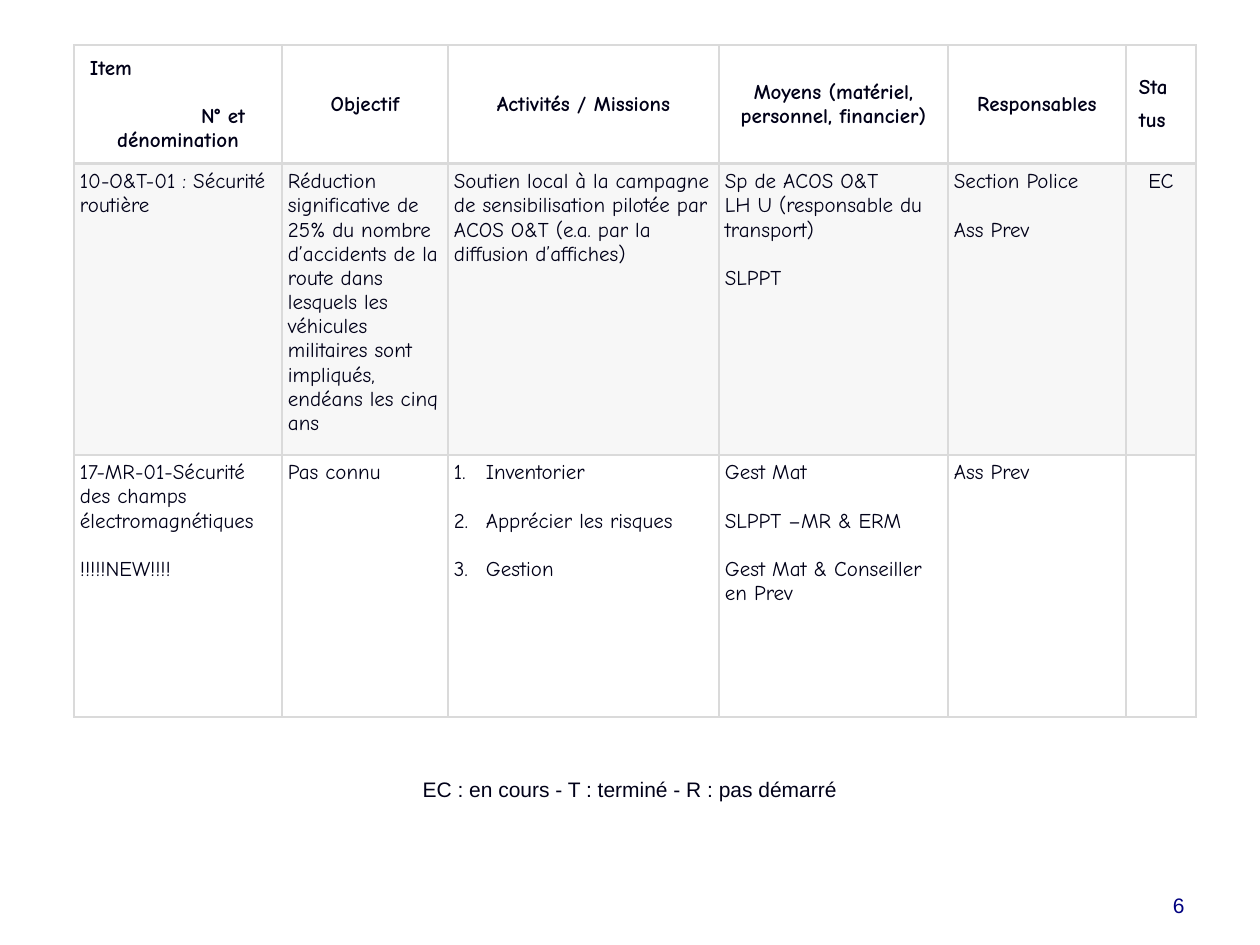
from dataclasses import dataclass

from lxml.etree import SubElement
from pptx import Presentation
from pptx.dml.color import RGBColor
from pptx.enum.text import MSO_ANCHOR, PP_ALIGN
from pptx.oxml.ns import qn
from pptx.util import Pt

SCALE = 914400 / 126
LEFT, CENTER, RIGHT = PP_ALIGN.LEFT, PP_ALIGN.CENTER, PP_ALIGN.RIGHT
TOP, MIDDLE, BOTTOM = MSO_ANCHOR.TOP, MSO_ANCHOR.MIDDLE, MSO_ANCHOR.BOTTOM
GAP = 13.8


def px(n):
    """Turn pixels into EMU."""
    return round(n * SCALE)


def rgb(value):
    """Turn a hex string into a colour."""
    return RGBColor.from_string(value)


@dataclass
class Para:
    """One paragraph with its layout."""
    text: str
    before: float = 0
    align: PP_ALIGN = LEFT
    indent: int = 0
    numbered: bool = False


class Deck:
    """Holds the style and the current slide."""
    ink, navy, line = "000018", "000080", "DADADA"
    sans, hand, size = "Arial", "Comic Neue", 12

    def __init__(self, width, height):
        """Start a presentation with one blank slide."""
        self.prs = Presentation()
        self.prs.slide_width, self.prs.slide_height = px(width), px(height)
        self.s = self.prs.slides.add_slide(self.prs.slide_layouts[6])

    def add_paras(self, tf, paras, font, color, bold=False):
        """Fill a text frame paragraph by paragraph."""
        for i, para in enumerate(paras):
            p = tf.paragraphs[0] if i == 0 else tf.add_paragraph()
            p.alignment = para.align
            if para.before:
                p.space_before = Pt(para.before)
            pPr = p._p.get_or_add_pPr()
            if para.indent:
                pPr.set("marL", str(px(para.indent)))
            if para.numbered:
                pPr.set("indent", str(-px(para.indent)))
                SubElement(pPr, qn("a:buFont"), typeface="+mj-lt")
                SubElement(pPr, qn("a:buAutoNum"), type="arabicPeriod")
            r = p.add_run()
            r.text = para.text
            r.font.name, r.font.size, r.font.bold = font, Pt(self.size), bold
            r.font.color.rgb = rgb(color)

    def text(self, x, y, w, h, para, color, anchor=TOP):
        """Add a text box."""
        tf = self.s.shapes.add_textbox(px(x), px(y), px(w), px(h)).text_frame
        tf.word_wrap, tf.vertical_anchor = True, anchor
        self.add_paras(tf, [para], self.sans, color)

    def borders(self, cell, bottom):
        """Draw the four borders of a cell."""
        tcPr = cell._tc.get_or_add_tcPr()
        for side, width in (("L", 1), ("R", 1), ("T", 1), ("B", bottom)):
            ln = SubElement(tcPr, qn(f"a:ln{side}"), w=str(Pt(width)))
            fill = SubElement(ln, qn("a:solidFill"))
            SubElement(fill, qn("a:srgbClr"), val=self.line)

    def shade(self, cell):
        """Fill a cell with a light tint of the line colour."""
        cell.fill.solid()
        cell.fill.fore_color.rgb = rgb(self.line)
        clr = cell._tc.tcPr.find(f"{qn('a:solidFill')}/{qn('a:srgbClr')}")
        SubElement(clr, qn("a:alpha"), val="20000")

    def table(self, x, y, cols, heights, rows):
        """Add a table with a header row and a shaded first body row."""
        frame = self.s.shapes.add_table(
            len(rows), len(cols), px(x), px(y), px(sum(cols)), px(sum(heights)))
        tbl = frame.table
        tbl.first_row = tbl.horz_banding = False
        for column, w in zip(tbl.columns, cols):
            column.width = px(w)
        for i, (height, row) in enumerate(zip(heights, rows)):
            tbl.rows[i].height = px(height)
            for j, paras in enumerate(row):
                cell = tbl.cell(i, j)
                header = i == 0
                self.borders(cell, 2 if header else 1)
                if i == 1:
                    self.shade(cell)
                else:
                    cell.fill.background()
                cell.margin_left = cell.margin_right = px(13 if header else 6)
                cell.margin_top = cell.margin_bottom = px(6)
                cell.vertical_anchor = MIDDLE if header else TOP
                self.add_paras(cell.text_frame, paras, self.hand, self.ink, header)
        return tbl


def spaced(*texts, **layout):
    """Make paragraphs one line apart."""
    return [Para(t, GAP if i else 0, **layout) for i, t in enumerate(texts)]


def centred(text):
    """Make one centred paragraph."""
    return [Para(text, align=CENTER)]


def main():
    """Build the slide."""
    deck = Deck(1260, 945)
    header = [
        [Para("Item", indent=3), Para("N° et", GAP, indent=114),
         Para("dénomination", align=CENTER)],
        *map(centred, ("Objectif", "Activités / Missions",
                       "Moyens (matériel, personnel, financier)", "Responsables")),
        [Para("Sta"), Para("tus", 5)],
    ]
    road = [
        spaced("10-O&T-01 : Sécurité routière"),
        spaced("Réduction significative de 25% du nombre d’accidents de la route dans "
               "lesquels les véhicules militaires sont impliqués, endéans les cinq ans"),
        spaced("Soutien local à la campagne de sensibilisation pilotée par ACOS O&T "
               "(e.a. par la diffusion d’affiches)"),
        [Para("Sp de ACOS O&T"), Para("LH U (responsable du transport)"),
         Para("SLPPT", GAP)],
        spaced("Section Police", "Ass Prev"),
        centred("EC"),
    ]
    fields = [
        spaced("17-MR-01-Sécurité des champs électromagnétiques", "!!!!!NEW!!!!"),
        spaced("Pas connu"),
        spaced("Inventorier", "Apprécier les risques", "Gestion",
               indent=32, numbered=True),
        spaced("Gest Mat", "SLPPT –MR & ERM", "Gest Mat & Conseiller en Prev"),
        spaced("Ass Prev"),
        [],
    ]
    tbl = deck.table(74, 45, [208, 166, 271, 229, 178, 70], [119, 291, 262],
                     [header, road, fields])
    status = tbl.cell(0, 5)
    status.vertical_anchor, status.margin_top = TOP, px(31)
    deck.text(315, 770, 630, 38,
              Para("EC : en cours - T : terminé - R : pas démarré", align=CENTER), deck.ink)
    deck.text(903, 861, 294, 63, Para("6", align=RIGHT), deck.navy, BOTTOM)
    deck.prs.save("out.pptx")


if __name__ == "__main__":
    main()
